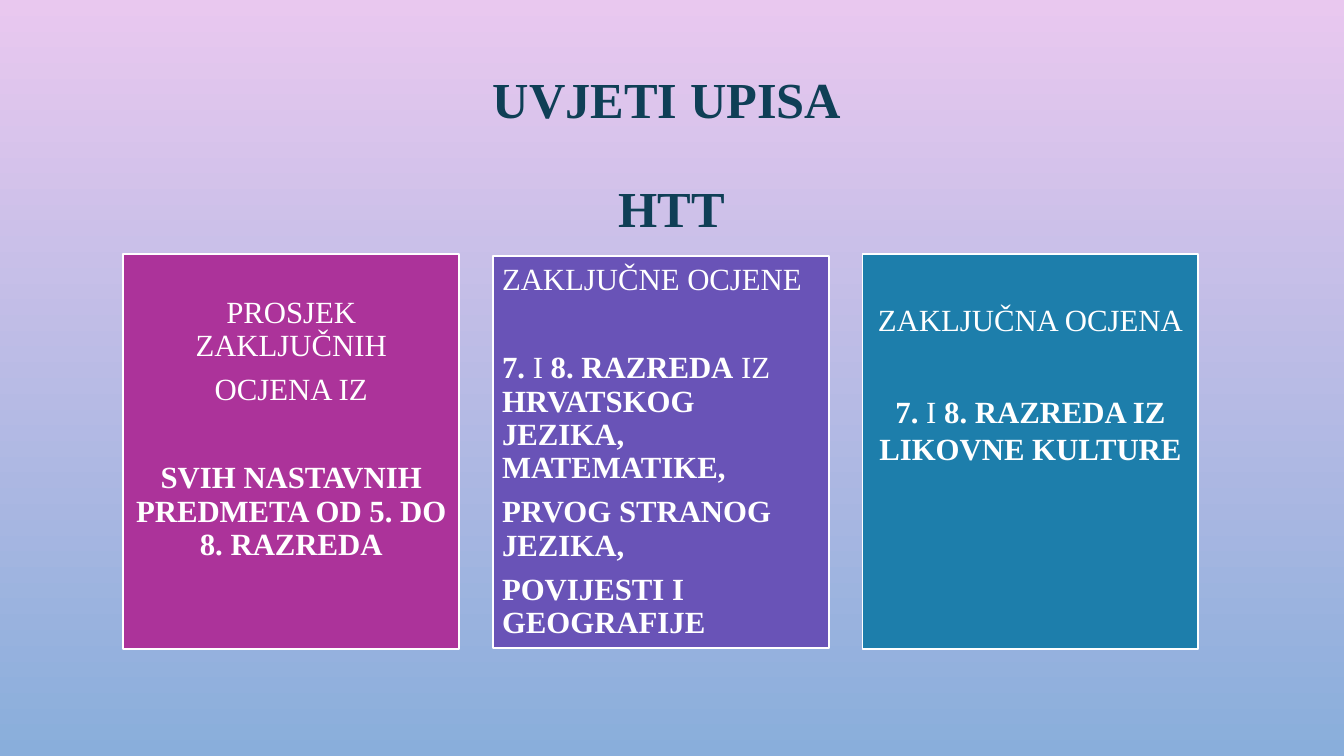
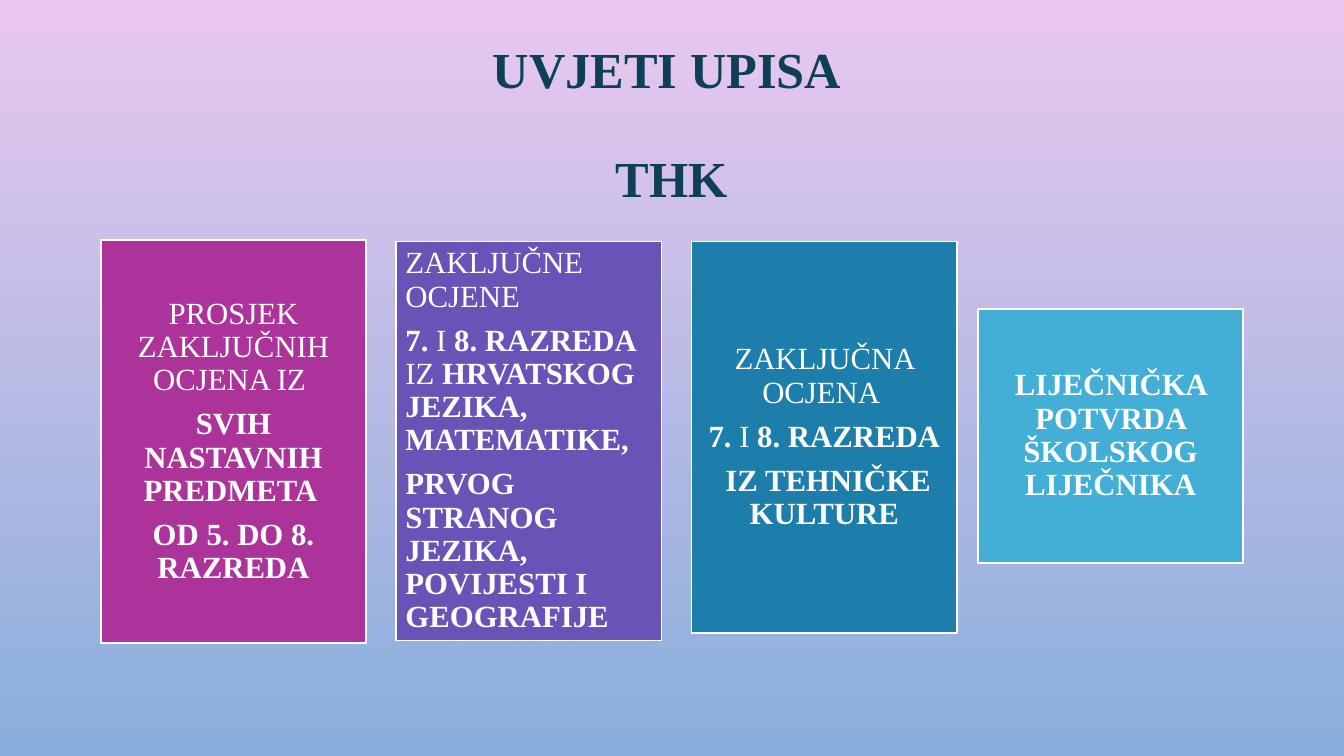
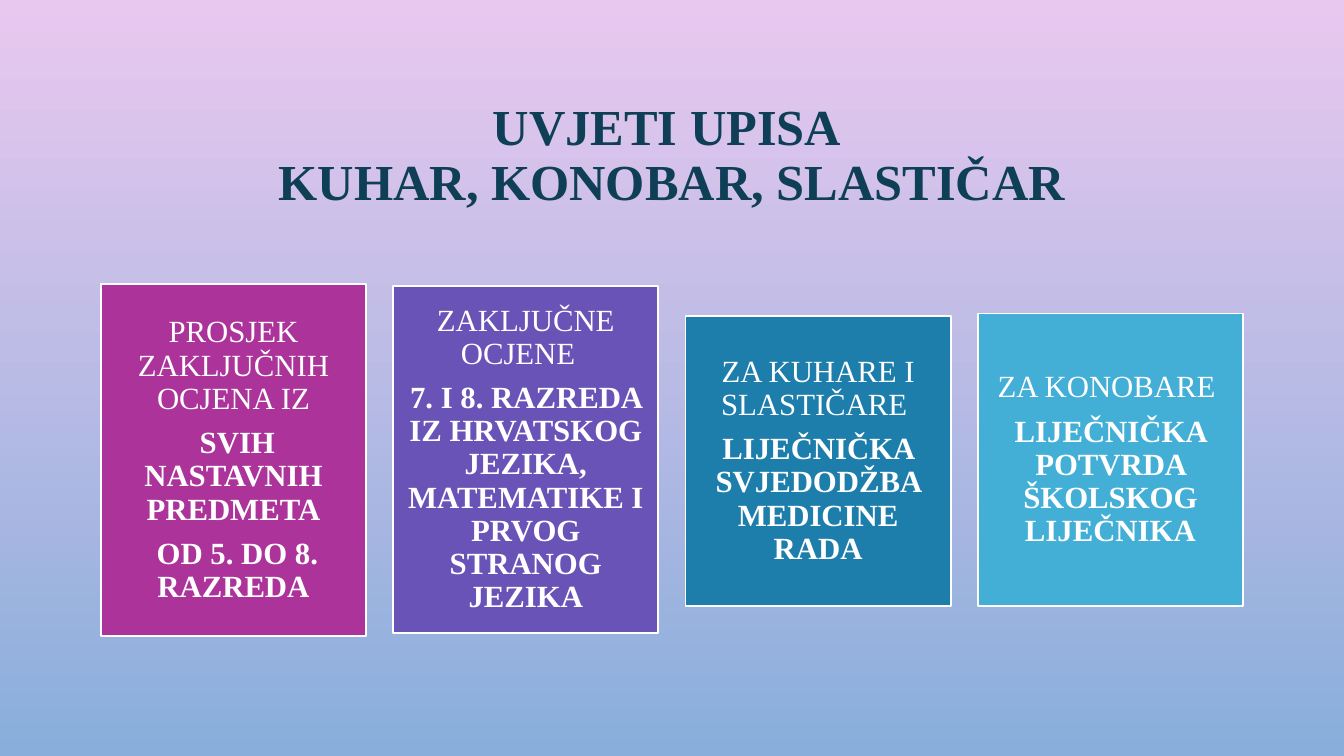
"""Build three slides of enrolment conditions as rows of coloured cards."""
from dataclasses import dataclass
from typing import Any

import pptx
from pptx import slide as sl
from pptx import util as u
from pptx.dml.color import RGBColor
from pptx.enum import shapes, text

FONT = "Times New Roman"
INK, WHITE = "0F3F56", "FFFFFF"
BACKDROP = ("E9C8EF", "89AEDB")
FILLS = ("AC339A", "6953B7", "1D7EAB", "43AFD6")
TITLE_SIZE, CARD_SIZE, INSET = 36, 22, 6.6
LEADING, AFTER = 0.9, 7.7
ROW = 31.4
CENTER, LEFT = text.PP_ALIGN.CENTER, text.PP_ALIGN.LEFT
GRADES = "*7. *I* 8. RAZREDA*"
SUBJECTS = GRADES + " IZ *HRVATSKOG JEZIKA, MATEMATIKE, *"
DOCTOR = "*LIJEČNIČKA POTVRDA ŠKOLSKOG LIJEČNIKA*"


@dataclass
class Para:
    text: str
    after: float = AFTER
    leading: float = LEADING


@dataclass
class Card:
    top: float
    height: float
    paras: list[Para]
    align: Any = CENTER
    foot: float = 0
    shift: float = 0


@dataclass
class Page:
    title: tuple[str, str]
    title_top: float
    title_gap: float
    left: float
    pitch: float
    width: float
    cards: list[Card]


PAGES = [
    Page(("UVJETI UPISA ", "HTT"), 49, 38.8, 88, 264, 240, [
        Card(181.5, 282, [
            Para("PROSJEK ZAKLJUČNIH"),
            Para(" OCJENA IZ ", AFTER + ROW),
            Para("*SVIH NASTAVNIH PREDMETA OD 5. DO 8. RAZREDA*"),
        ], foot=ROW),
        Card(183, 280, [
            Para("ZAKLJUČNE OCJENE", AFTER + ROW),
            Para(SUBJECTS),
            Para("*PRVOG STRANOG JEZIKA,*"),
            Para("*POVIJESTI I GEOGRAFIJE*"),
        ], LEFT),
        Card(181.5, 282, [
            Para("ZAKLJUČNA OCJENA", AFTER + ROW),
            Para("*7. *I* 8. RAZREDA IZ LIKOVNE KULTURE*", 0, 1.0),
        ], foot=3 * ROW),
    ]),
    Page(("UVJETI UPISA ", "THK"), 27.5, 38.8, 72, 211, 189.5, [
        Card(171.5, 288, [
            Para("PROSJEK ZAKLJUČNIH OCJENA IZ "),
            Para("*SVIH NASTAVNIH PREDMETA *"),
            Para("*OD 5. DO 8. RAZREDA*"),
        ]),
        Card(172.5, 285, [
            Para("ZAKLJUČNE OCJENE"),
            Para(SUBJECTS),
            Para("*PRVOG STRANOG JEZIKA, POVIJESTI I GEOGRAFIJE*"),
        ], LEFT),
        Card(172.5, 279.5, [
            Para("ZAKLJUČNA OCJENA "),
            Para(GRADES),
            Para("* IZ TEHNIČKE KULTURE*"),
        ]),
        Card(220.5, 181.5, [Para(DOCTOR)], shift=-6.5),
    ]),
    Page(("UVJETI UPISA ", "KUHAR, KONOBAR, SLASTIČAR"), 49, 0, 72, 208.8, 189.5, [
        Card(203, 251.5, [
            Para("PROSJEK ZAKLJUČNIH OCJENA IZ"),
            Para(" *SVIH NASTAVNIH PREDMETA*"),
            Para("* OD 5. DO 8. RAZREDA*"),
        ]),
        Card(204.5, 247.5, [
            Para("ZAKLJUČNE OCJENE  "),
            Para("*7. I 8. RAZREDA IZ HRVATSKOG JEZIKA, MATEMATIKE I PRVOG STRANOG JEZIKA*"),
        ]),
        Card(225.5, 207.5, [
            Para("ZA KUHARE I SLASTIČARE "),
            Para("*LIJEČNIČKA SVJEDODŽBA MEDICINE RADA*"),
        ]),
        Card(224, 209, [Para("ZA KONOBARE "), Para(DOCTOR)]),
    ]),
]


def rgb(value: str) -> RGBColor:
    return RGBColor.from_string(value)


def apply(target: Any, values: dict[str, Any]) -> None:
    for name, value in values.items():
        setattr(target, name, value)


def place(sp: Any, left: float, top: float, width: float, height: float) -> None:
    apply(sp, {"left": u.Pt(left), "top": u.Pt(top),
               "width": u.Pt(width), "height": u.Pt(height)})


def add_run(p: Any, words: str, size: float, color: str, bold: bool) -> None:
    r = p.add_run()
    r.text = words
    apply(r.font, {"name": FONT, "size": u.Pt(size), "bold": bold})
    r.font.color.rgb = rgb(color)


def next_para(tf: Any, index: int) -> Any:
    return tf.add_paragraph() if index else tf.paragraphs[0]


def draw_title(s: sl.Slide, page: Page) -> None:
    sp = s.shapes.title
    place(sp, 72, page.title_top, 816, 126)
    tf = sp.text_frame
    apply(tf, {"vertical_anchor": text.MSO_ANCHOR.MIDDLE, "word_wrap": True,
               "auto_size": text.MSO_AUTO_SIZE.NONE})
    for i, line in enumerate(page.title):
        p = next_para(tf, i)
        apply(p, {"alignment": CENTER, "line_spacing": LEADING,
                  "space_before": u.Pt(page.title_gap if i else 0)})
        add_run(p, line, TITLE_SIZE, INK, True)


def draw_card(s: sl.Slide, card: Card, left: float, width: float, fill: str) -> None:
    sp = s.shapes.add_shape(shapes.MSO_SHAPE.RECTANGLE, 0, 0, 0, 0)
    place(sp, left + card.shift, card.top, width, card.height)
    sp.shadow.inherit = False
    sp.fill.solid()
    sp.fill.fore_color.rgb = rgb(fill)
    sp.line.color.rgb = rgb(WHITE)
    sp.line.width = u.Pt(1.25)
    tf = sp.text_frame
    apply(tf, {"vertical_anchor": text.MSO_ANCHOR.MIDDLE, "word_wrap": True,
               "margin_left": u.Pt(INSET), "margin_right": u.Pt(INSET),
               "margin_top": u.Pt(INSET), "margin_bottom": u.Pt(INSET + card.foot)})
    for i, para in enumerate(card.paras):
        p = next_para(tf, i)
        apply(p, {"alignment": card.align, "line_spacing": para.leading,
                  "space_after": u.Pt(para.after)})
        for j, words in enumerate(para.text.split("*")):
            if words:
                add_run(p, words, CARD_SIZE, WHITE, j % 2 == 1)


def main() -> None:
    prs = pptx.Presentation()
    apply(prs, {"slide_width": u.Pt(960), "slide_height": u.Pt(540)})
    fill = prs.slide_master.background.fill
    fill.gradient()
    fill.gradient_angle = 270
    for stop, color, position in zip(fill.gradient_stops, BACKDROP, (0, 1)):
        stop.color.rgb = rgb(color)
        stop.position = position
    for page in PAGES:
        s = prs.slides.add_slide(prs.slide_layouts.get_by_name("Title Only"))
        draw_title(s, page)
        for i, (card, color) in enumerate(zip(page.cards, FILLS)):
            draw_card(s, card, page.left + i * page.pitch, page.width, color)
    prs.save("out.pptx")


if __name__ == "__main__":
    main()
